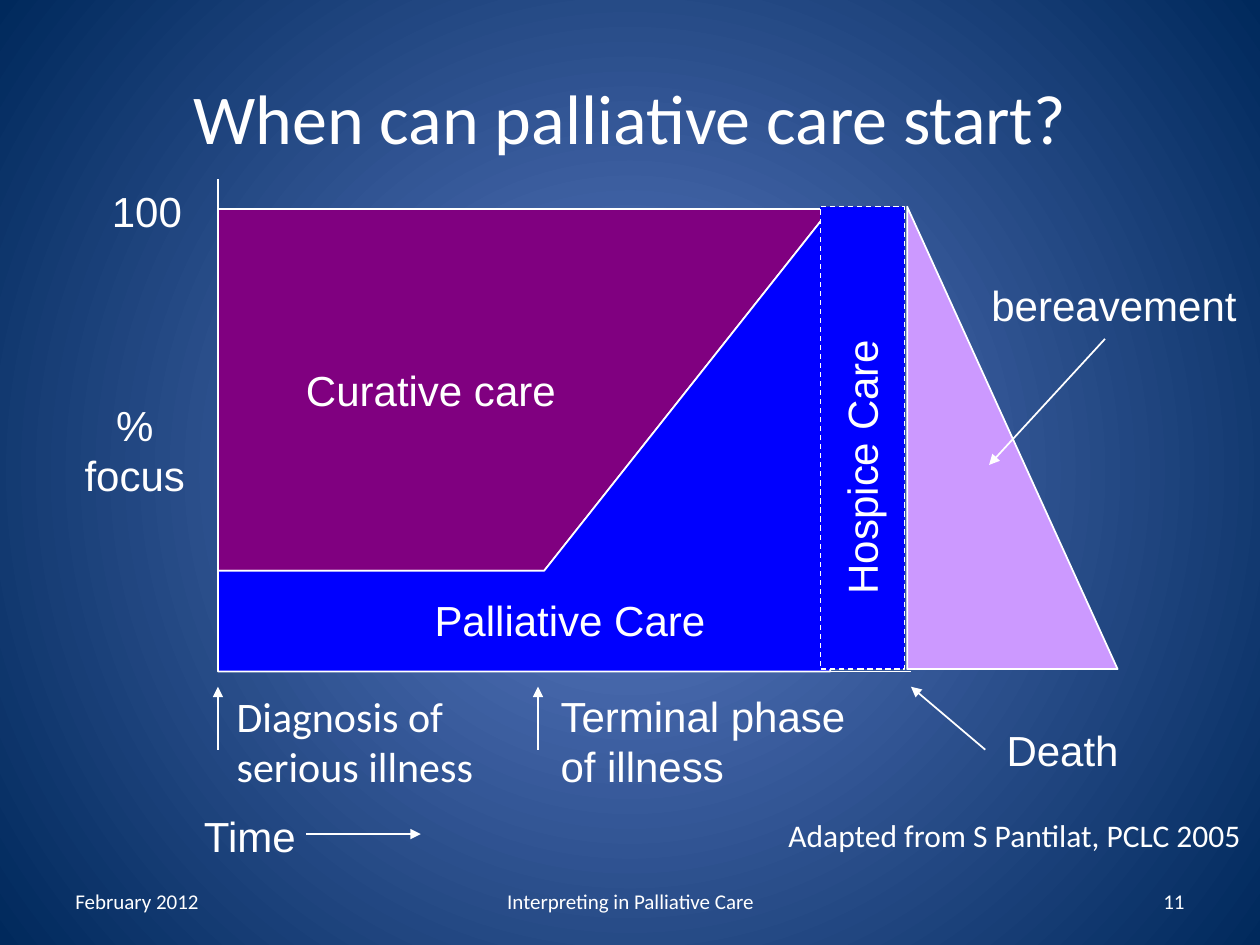
from lxml import etree
from pptx import Presentation
from pptx.dml.color import RGBColor
from pptx.enum.dml import MSO_LINE
from pptx.enum.shapes import MSO_CONNECTOR, MSO_SHAPE as SHAPE
from pptx.enum.text import MSO_ANCHOR as ANCHOR, PP_ALIGN as ALIGN
from pptx.oxml.ns import qn
from pptx.util import Inches, Pt

WHITE = RGBColor(0xFF, 0xFF, 0xFF)
PURPLE = RGBColor(0x80, 0x00, 0x80)
BLUE = RGBColor(0x00, 0x00, 0xFF)
LILAC = RGBColor(0xCC, 0x99, 0xFF)
MID = RGBColor(0x5E, 0x7C, 0xC5)
EDGE = RGBColor(0x00, 0x29, 0x5C)

deck = Presentation()
deck.slide_width, deck.slide_height = Inches(10), Inches(7.5)
slide = deck.slides.add_slide(deck.slide_layouts[6])
shapes = slide.shapes


def paint(shape, color, width=1):
    shape.shadow.inherit = False
    shape.fill.solid()
    shape.fill.fore_color.rgb = color
    shape.line.color.rgb = WHITE
    shape.line.width = Pt(width)


def write(text, place, size=24, font="Arial", align=ALIGN.LEFT, wrap=False, anchor=ANCHOR.TOP):
    box = shapes.add_textbox(*map(Inches, place))
    frame = box.text_frame
    frame.text = text
    frame.word_wrap = wrap
    frame.vertical_anchor = anchor
    for para in frame.paragraphs:
        para.alignment = align
        for run in para.runs:
            run.font.size = Pt(size)
            run.font.name = font
            run.font.color.rgb = WHITE
    return box


# Radial background
back = slide.background.fill
back.gradient()
for stop, color, pos in zip(back.gradient_stops, (MID, EDGE), (0, 1)):
    stop.color.rgb = color
    stop.position = pos
grad = slide.background._cSld.find(".//" + qn("a:gradFill"))
grad.remove(grad.find(qn("a:lin")))
ring = etree.SubElement(grad, qn("a:path"), path="circle")
etree.SubElement(ring, qn("a:fillToRect"), l="50000", t="50000", r="50000", b="50000")

# Title
write("When can palliative care start?", (0.5, 0.3, 9, 1.25), 40, "Calibri",
      ALIGN.CENTER, True, ANCHOR.MIDDLE)

# Care areas: they share the sloping edge
left, top, low, base = 1.73, 1.66, 4.53, 5.33
bend, right = 4.32, 6.59
areas = [
    (PURPLE, [(left, top), (left, low), (bend, low), (right, top)]),
    (BLUE, [(right, top), (right, base), (left, base), (left, low), (bend, low)]),
]
for color, dots in areas:
    dots = [(Inches(x), Inches(y)) for x, y in dots]
    pen = shapes.build_freeform(*dots[0])
    pen.add_line_segments(dots[1:])
    paint(pen.convert_to_shape(), color)

# Bereavement and hospice
grief = shapes.add_shape(SHAPE.RIGHT_TRIANGLE, *map(Inches, (7.2, 1.64, 1.67, 3.67)))
paint(grief, LILAC)
hospice = shapes.add_shape(SHAPE.RECTANGLE, *map(Inches, (6.51, 1.64, 0.67, 3.67)))
paint(hospice, BLUE, 0.75)
hospice.line.dash_style = MSO_LINE.DASH

# Axis ends and arrows: start, end, arrowhead
lines = [
    ((left, top), (left, 1.42), False),
    ((right, base), (7.23, base), False),
    ((left, 5.95), (left, 5.45), True),
    ((4.27, 5.95), (4.27, 5.45), True),
    ((7.82, 5.95), (7.23, 5.45), True),
    ((2.43, 6.62), (3.34, 6.62), True),
    ((8.77, 2.69), (7.85, 3.69), True),
]
for start, end, head in lines:
    line = shapes.add_connector(MSO_CONNECTOR.STRAIGHT, *map(Inches, start + end))
    line.line.color.rgb = WHITE
    line.line.width = Pt(1)
    props = line._element.spPr
    if head:
        etree.SubElement(props.find(qn("a:ln")), qn("a:tailEnd"), type="triangle")
    etree.SubElement(props, qn("a:effectLst"))

# Labels
write("100", (0.79, 1.42, 0.76, 0.5))
write("%\nfocus", (0.57, 3.12, 1, 0.9), align=ALIGN.CENTER)
write("Curative care", (2.33, 2.84, 2.19, 0.5))
write("Palliative Care", (3.35, 4.67, 2.35, 0.5))
write("Hospice Care", (5.71, 3.44, 2.25, 0.5), wrap=True).rotation = 270
write("bereavement", (7.77, 2.17, 2.15, 0.5))
write("Diagnosis of\nserious illness", (1.78, 5.43, 2.1, 0.91), font="Calibri")
write("Terminal phase\nof illness", (4.35, 5.43, 2.49, 0.91))
write("Death", (7.89, 5.7, 1.1, 0.51))
write("Time", (1.52, 6.38, 2.02, 0.5), wrap=True)
write("Adapted from S Pantilat, PCLC 2005", (6.16, 6.43, 3.83, 0.4), 18, "Calibri", wrap=True)

# Footer
feet = [
    ("February 2012", 0.5, 2.33, ALIGN.LEFT),
    ("Interpreting in Palliative Care", 3.42, 3.17, ALIGN.CENTER),
    ("11", 7.17, 2.33, ALIGN.RIGHT),
]
for text, x, width, align in feet:
    write(text, (x, 6.95, width, 0.4), 12, "Calibri", align, True, ANCHOR.MIDDLE)

deck.save("out.pptx")
